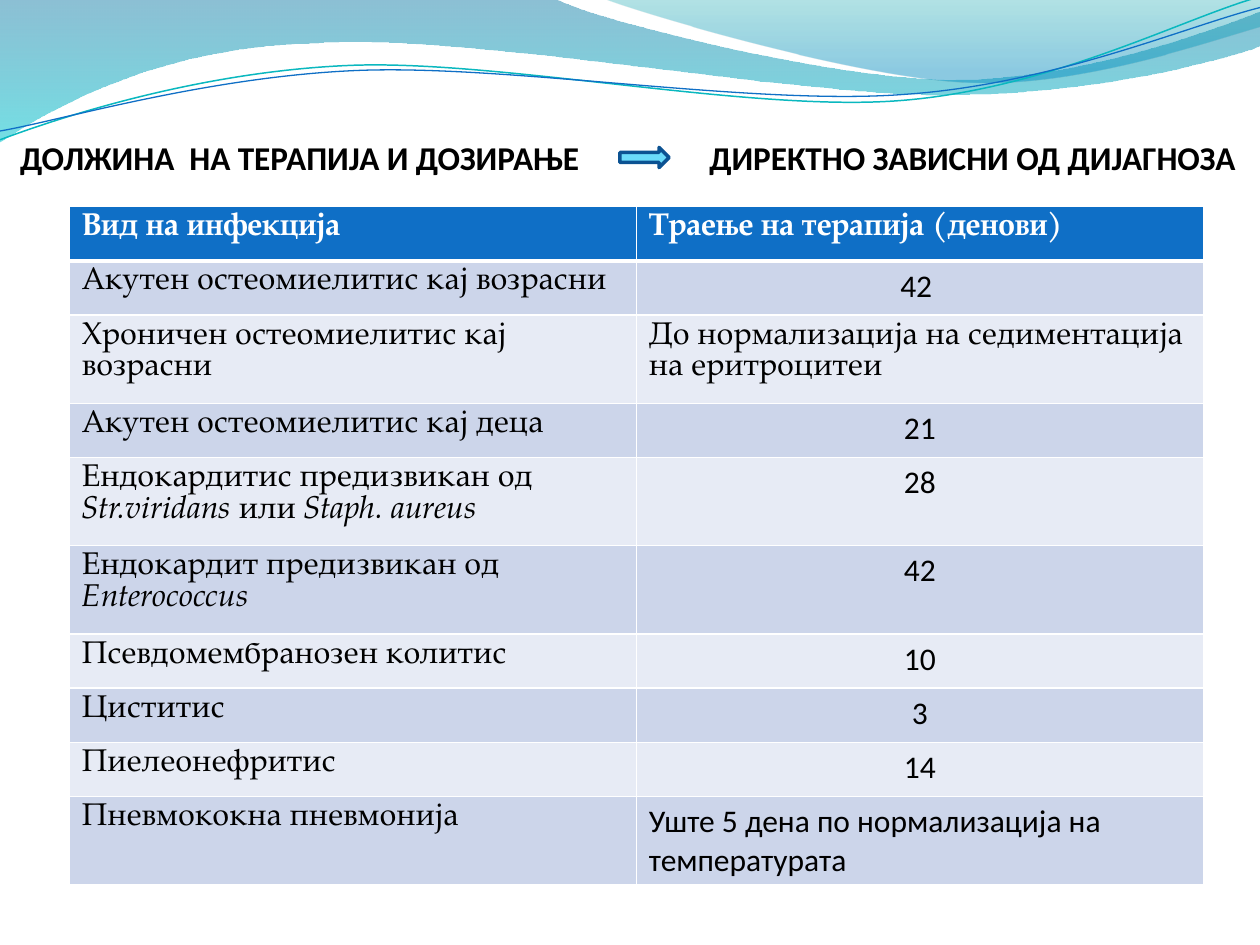
from lxml import etree
from pptx import Presentation
from pptx import util as u
from pptx.dml.color import RGBColor
from pptx.enum import shapes, text
from pptx.oxml.ns import qn

WHITE = RGBColor(0xFF, 0xFF, 0xFF)
BLACK = RGBColor(0x00, 0x00, 0x00)
BLUE = RGBColor(0x0F, 0x6F, 0xC6)
TEAL = RGBColor(0x0A, 0xB8, 0xBF)
DEEP_BLUE = RGBColor(0x00, 0x74, 0xA1)
CYAN = RGBColor(0x00, 0xC6, 0xCF)
SEA = RGBColor(0x00, 0xA1, 0xA9)
SKY = RGBColor(0x00, 0x8B, 0xBF)
ARROW_FILL = RGBColor(0x6B, 0xDB, 0xFA)
ARROW_LINE = RGBColor(0x0B, 0x52, 0x92)
BANDS = (RGBColor(0xCC, 0xD5, 0xEA), RGBColor(0xE7, 0xEB, 0xF5))

SANS, SERIF = "Calibri", "TeX Gyre Pagella"
WIDTH, HEIGHT = 10, 7.5
SHORT_ROW, TALL_ROW = 0.43, 0.67

# Each wave is a start point and steps: two numbers draw a line, six a Bézier curve.
WIDE_WAVE = ((0, 0), [
    (4.4, -0.01), (4.76, 0.17, 6.64, 0.63, 7.58, 0.63),
    (8.53, 0.63, 9.58, 0.26, 10, 0.09), (10.01, 0.36),
    (9.83, 0.44, 8.7, 0.76, 7.46, 0.75), (6.22, 0.75, 3.82, 0.28, 2.57, 0.34),
    (1.29, 0.36, 0.46, 0.83, -0.01, 1.13), (0, 0)])
RIGHT_WAVE = ((4.79, -0.01), [
    (5.09, 0.11, 6.82, 0.62, 7.69, 0.65), (8.56, 0.69, 9.61, 0.32, 10, 0.21),
    (10, 0), (4.79, -0.01)])
TEAL_STRAND = ((0, 1.11), [
    (0.48, 0.93, 1.58, 0.57, 2.77, 0.52), (3.95, 0.47, 5.93, 0.89, 7.13, 0.8),
    (8.33, 0.71, 9.38, 0.15, 9.98, -0.02)])
BLUE_STRAND = ((0, 1.04), [
    (0.47, 0.96, 1.64, 0.61, 2.83, 0.56), (4.03, 0.51, 5.97, 0.84, 7.17, 0.75),
    (8.36, 0.67, 9.41, 0.21, 10, 0.06)])

HEADER = ("Вид на инфекција", "Траење на терапија (денови)")
# Infection (text with Latin names at odd places), duration, font, centred, height.
THERAPIES = [
    (["Акутен остеомиелитис кај возрасни"], "42 ", SANS, True, SHORT_ROW),
    (["Хроничен остеомиелитис кај возрасни"],
     "До нормализација на седиментација на еритроцитеи", SERIF, False, TALL_ROW),
    (["Акутен остеомиелитис кај деца"], "21", SANS, True, SHORT_ROW),
    (["Ендокардитис предизвикан од ", "Str.viridans ", "или ", "Staph. aureus"],
     "28", SANS, True, TALL_ROW),
    (["Ендокардит предизвикан од ", "Enterococcus"], "42", SANS, True, TALL_ROW),
    (["Псевдомембранозен колитис"], "10", SANS, True, SHORT_ROW),
    (["Циститис"], "3", SANS, True, SHORT_ROW),
    (["Пиелеонефритис"], "14", SANS, True, SHORT_ROW),
    (["Пневмококна пневмонија"],
     "Уште 5 дена по нормализација на температурата", SANS, False, TALL_ROW),
]


def add_outline(page, wave, close):
    """Build an outline through all points, then turn each curve's three lines into one."""
    start, steps = wave
    builder = page.shapes.build_freeform(*map(u.Inches, start))
    for step in steps:
        pairs = zip(step[::2], step[1::2])
        builder.add_line_segments([(u.Inches(x), u.Inches(y)) for x, y in pairs],
                                  close=False)
    shape = builder.convert_to_shape()
    shape.shadow.inherit = False
    lines = iter(list(shape._element.spPr.iter(qn("a:lnTo"))))
    for step in steps:
        segment = [next(lines) for _ in step[::2]]
        if len(segment) == 3:
            curve = etree.Element(qn("a:cubicBezTo"))
            segment[0].addprevious(curve)
            for line in segment:
                curve.append(line[0])
                line.getparent().remove(line)
    if close:
        outline = next(shape._element.spPr.iter(qn("a:moveTo"))).getparent()
        etree.SubElement(outline, qn("a:close"))
    return shape


def add_wave(page, wave, stops):
    """Add a filled wave; stops hold position, colour and opacity in percent."""
    shape = add_outline(page, wave, True)
    shape.line.fill.background()
    shape.fill.gradient()
    shape.fill.gradient_angle = 270
    for stop, (position, colour, _) in zip(shape.fill.gradient_stops, stops):
        stop.position = position
        stop.color.rgb = colour
    colours = shape._element.spPr.iter(qn("a:srgbClr"))
    for node, (_, _, opacity) in zip(list(colours), stops):
        etree.SubElement(node, qn("a:alpha"), val=str(opacity * 1000))


def add_strand(page, wave, colour, weight):
    shape = add_outline(page, wave, False)
    shape.fill.background()
    shape.line.color.rgb = colour
    shape.line.width = u.Pt(weight)


def style(item, font, size, colour, bold):
    """Set the font of a paragraph or a run."""
    item.font.name = font
    item.font.size = u.Pt(size)
    item.font.color.rgb = colour
    item.font.bold = bold


def add_title(page, left_part, right_part):
    """Add one line whose second part starts at a tab stop."""
    box = page.shapes.add_textbox(u.Inches(0.16), u.Inches(0.86),
                                  u.Inches(WIDTH - 0.16), u.Inches(0.55))
    frame = box.text_frame
    frame.word_wrap = True
    frame.vertical_anchor = text.MSO_ANCHOR.BOTTOM
    frame.margin_left = frame.margin_right = frame.margin_bottom = 0
    para = frame.paragraphs[0]
    para.add_run().text = f"{left_part}\t{right_part}"
    style(para, SANS, 19, BLACK, True)
    stops = etree.Element(qn("a:tabLst"))
    etree.SubElement(stops, qn("a:tab"), pos=str(u.Inches(5.47)), algn="l")
    para._p.get_or_add_pPr().insert(0, stops)


def add_arrow(page):
    arrow = page.shapes.add_shape(shapes.MSO_SHAPE.RIGHT_ARROW, u.Inches(4.92),
                                  u.Inches(1.17), u.Inches(0.39), u.Inches(0.16))
    arrow.shadow.inherit = False
    arrow.fill.solid()
    arrow.fill.fore_color.rgb = ARROW_FILL
    arrow.line.color.rgb = ARROW_LINE
    arrow.line.width = u.Pt(2)


def set_borders(cell, top, bottom):
    """Draw white cell borders; top and bottom are widths in points."""
    properties = cell._tc.get_or_add_tcPr()
    for i, (side, weight) in enumerate((("L", 1), ("R", 1), ("T", top), ("B", bottom))):
        line = etree.Element(qn(f"a:ln{side}"), w=str(u.Pt(weight)))
        fill = etree.SubElement(line, qn("a:solidFill"))
        etree.SubElement(fill, qn("a:srgbClr"), val=str(WHITE))
        properties.insert(i, line)


def fill_cell(cell, parts, font, fill, colour=BLACK, bold=False, centred=False):
    """Write a cell's parts, every second one in italics.

    Fonts sit on the runs, since row heights are measured from them.
    """
    cell.fill.solid()
    cell.fill.fore_color.rgb = fill
    para = cell.text_frame.paragraphs[0]
    if centred:
        para.alignment = text.PP_ALIGN.CENTER
    for i, part in enumerate(parts):
        span = para.add_run()
        span.text = part
        style(span, font, 18, colour, bold)
        if i % 2:
            span.font.italic = True


def add_therapy_table(page):
    heights = [SHORT_ROW] + [therapy[-1] for therapy in THERAPIES]
    table = page.shapes.add_table(len(heights), 2, u.Inches(0.55), u.Inches(1.64),
                                  u.Inches(9), u.Inches(sum(heights))).table
    for row, height in zip(table.rows, heights):
        row.height = u.Inches(height)
    for column, label in enumerate(HEADER):
        fill_cell(table.cell(0, column), [label], SERIF, BLUE, WHITE, True)
        set_borders(table.cell(0, column), 1, 3)
    for i, (infection, duration, font, centred, _) in enumerate(THERAPIES):
        band = BANDS[i % 2]
        name_cell, time_cell = table.rows[i + 1].cells
        fill_cell(name_cell, infection, SERIF, band)
        fill_cell(time_cell, [duration], font, band, centred=centred)
        for cell in (name_cell, time_cell):
            set_borders(cell, 1 if i else 3, 1)


def main():
    deck = Presentation()
    deck.slide_width, deck.slide_height = u.Inches(WIDTH), u.Inches(HEIGHT)
    page = deck.slides.add_slide(deck.slide_layouts[6])
    add_wave(page, WIDE_WAVE, [(0, DEEP_BLUE, 45), (1, CYAN, 55)])
    add_wave(page, RIGHT_WAVE, [(0, SEA, 30), (0.8, SKY, 45)])
    add_strand(page, TEAL_STRAND, TEAL, 0.85)
    add_strand(page, BLUE_STRAND, BLUE, 0.75)
    add_title(page, "ДОЛЖИНА  НА ТЕРАПИЈА И ДОЗИРАЊЕ", "ДИРЕКТНО ЗАВИСНИ ОД ДИЈАГНОЗА")
    add_arrow(page)
    add_therapy_table(page)
    deck.save("out.pptx")


if __name__ == "__main__":
    main()
